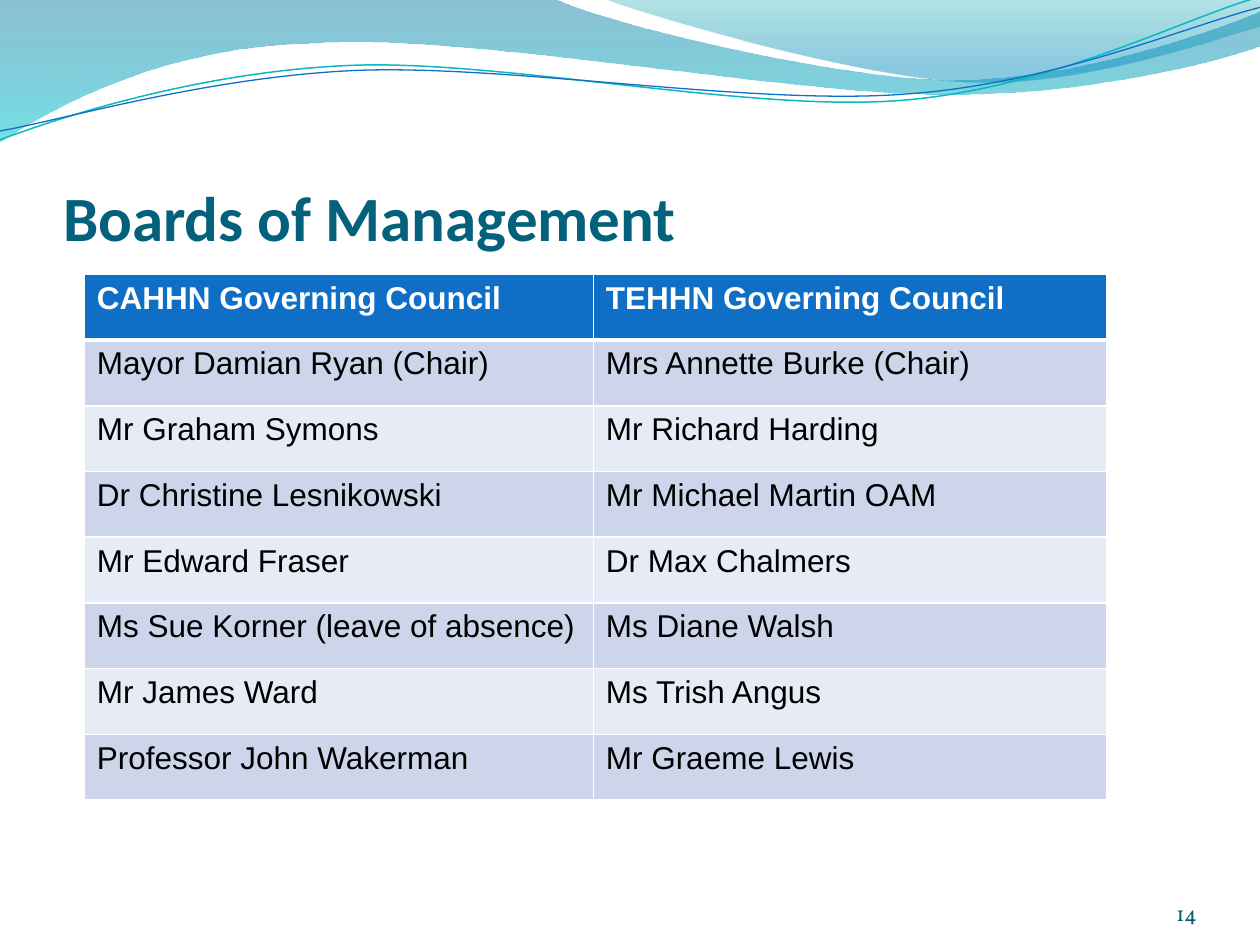
from dataclasses import dataclass

import pptx
import pptx.dml.color
import pptx.enum.text
import pptx.oxml.ns
import pptx.util
from lxml import etree

Cm, Pt = pptx.util.Cm, pptx.util.Pt
qn = pptx.oxml.ns.qn
TEXT = pptx.enum.text

HUES = {
    "title": "04617B", "page": "045D75", "head": "0F6FC6", "odd": "CCD5EA",
    "even": "E7EBF5", "white": "FFFFFF", "black": "000000",
    "sea": "0074A1", "aqua": "00C6CF", "teal": "00A1A9", "sky": "008BBF",
    "cyan": "0AB8BF",
}


@dataclass
class Stop:
    hue: str
    place: float
    alpha: int  # percent opaque


@dataclass
class Wave:
    start: tuple
    steps: list  # two numbers: a straight line; six: a cubic curve (cm)
    stops: tuple = ()
    hue: str = ""
    width: float = 0


WAVES = [
    Wave((0, 0), [
        (11.18, -0.03), (12.09, 0.43, 16.87, 1.6, 19.25, 1.6),
        (21.67, 1.6, 24.33, 0.66, 25.4, 0.23), (25.43, 0.91),
        (24.97, 1.12, 22.1, 1.93, 18.95, 1.9),
        (15.8, 1.9, 9.7, 0.71, 6.53, 0.86),
        (3.28, 0.91, 1.17, 2.11, -0.03, 2.87)],
        stops=(Stop("sea", 0, 45), Stop("aqua", 1, 55))),
    Wave((12.17, -0.03), [
        (12.93, 0.28, 17.32, 1.57, 19.53, 1.65),
        (21.74, 1.75, 24.41, 0.81, 25.4, 0.53), (25.4, 0)],
        stops=(Stop("teal", 0, 30), Stop("sky", 0.8, 45))),
    Wave((0, 2.82), [
        (1.22, 2.36, 4.01, 1.45, 7.04, 1.32),
        (10.03, 1.19, 15.06, 2.26, 18.11, 2.03),
        (21.16, 1.8, 23.83, 0.38, 25.35, -0.05)], hue="cyan", width=0.85),
    Wave((0, 2.64), [
        (1.19, 2.44, 4.17, 1.55, 7.19, 1.42),
        (10.24, 1.3, 15.16, 2.13, 18.21, 1.9),
        (21.23, 1.7, 23.9, 0.53, 25.4, 0.15)], hue="head", width=0.75),
]

ROWS = [
    ("CAHHN Governing Council", "TEHHN Governing Council"),
    ("Mayor Damian Ryan (Chair)", "Mrs Annette Burke (Chair)"),
    ("Mr Graham Symons", "Mr Richard Harding"),
    ("Dr Christine Lesnikowski", "Mr Michael Martin OAM"),
    ("Mr Edward Fraser", "Dr Max Chalmers"),
    ("Ms Sue Korner (leave of absence)", "Ms Diane Walsh"),
    ("Mr James Ward", "Ms Trish Angus"),
    ("Professor John Wakerman", "Mr Graeme Lewis"),
]


def paint(name: str) -> pptx.dml.color.RGBColor:
    return pptx.dml.color.RGBColor.from_string(HUES[name])


def add_run(para, text: str, face: str, size: float, hue: str, bold=False) -> None:
    run = para.add_run()
    run.text = text
    run.font.name, run.font.size, run.font.bold = face, Pt(size), bold
    run.font.color.rgb = paint(hue)


def place(shape, left: float, top: float, width: float, height: float) -> None:
    shape.left, shape.top = Cm(left), Cm(top)
    shape.width, shape.height = Cm(width), Cm(height)


def bend(shape, steps: list) -> None:
    """Turn the straight segments of curved steps into cubic curves."""
    for node, step in zip(list(shape._element.iter(qn("a:lnTo"))), steps):
        if len(step) == 2:
            continue
        curve = etree.Element(qn("a:cubicBezTo"))
        for x, y in zip(step[::2], step[1::2]):
            etree.SubElement(curve, qn("a:pt"), x=str(Cm(x) - shape.left),
                             y=str(Cm(y) - shape.top))
        node.getparent().replace(node, curve)


def draw_wave(slide, wave: Wave) -> None:
    pen = slide.shapes.build_freeform(*map(Cm, wave.start))
    ends = [tuple(map(Cm, step[-2:])) for step in wave.steps]
    pen.add_line_segments(ends, close=bool(wave.stops))
    shape = pen.convert_to_shape()
    bend(shape, wave.steps)
    shape.shadow.inherit = False
    if not wave.stops:
        shape.fill.background()
        shape.line.color.rgb = paint(wave.hue)
        shape.line.width = Pt(wave.width)
        return
    shape.line.fill.background()
    shape.fill.gradient()
    shape.fill.gradient_angle = 270
    for stop, item in zip(shape.fill.gradient_stops, wave.stops):
        stop.color.rgb, stop.position = paint(item.hue), item.place
    for node, item in zip(shape._element.iter(qn("a:gs")), wave.stops):
        etree.SubElement(node[0], qn("a:alpha"), val=str(item.alpha * 1000))


def edge(cell, side: str, width: float) -> None:
    line = etree.SubElement(cell._tc.get_or_add_tcPr(), qn("a:ln" + side), w=str(Pt(width)))
    fill = etree.SubElement(line, qn("a:solidFill"))
    etree.SubElement(fill, qn("a:srgbClr"), val=HUES["white"])


def draw_table(slide, rows: list) -> None:
    wide, high = (10.26, 10.35), 10.6
    table = slide.shapes.add_table(
        len(rows), 2, Cm(1.7), Cm(5.53), Cm(sum(wide)), Cm(high)).table
    for col, width in zip(table.columns, wide):
        col.width = Cm(width)
    for r, names in enumerate(rows):
        head = r == 0
        for c, name in enumerate(names):
            cell = table.cell(r, c)
            for side in "LRTB":
                thick = (r, side) in ((0, "B"), (1, "T"))
                edge(cell, side, 3 if thick else 1)
            cell.fill.solid()
            cell.fill.fore_color.rgb = paint("head" if head else "odd" if r % 2 else "even")
            add_run(cell.text_frame.paragraphs[0], name, "Arial", 18,
                    "white" if head else "black", head)


def set_frame(frame, top: float = 0) -> None:
    frame.word_wrap = True
    frame.auto_size = TEXT.MSO_AUTO_SIZE.NONE
    frame.vertical_anchor = TEXT.MSO_ANCHOR.BOTTOM
    frame.margin_left = frame.margin_right = frame.margin_bottom = 0
    frame.margin_top = Cm(top)


def main() -> None:
    deck = pptx.Presentation()
    deck.slide_width, deck.slide_height = Cm(25.4), Cm(19.05)
    slide = deck.slides.add_slide(deck.slide_layouts[5])

    # Waves along the top
    for wave in WAVES:
        draw_wave(slide, wave)

    # Title
    title = slide.shapes.title
    place(title, 1.27, 1.95, 22.86, 3.17)
    set_frame(title.text_frame, 0.13)
    para = title.text_frame.paragraphs[0]
    para.alignment = TEXT.PP_ALIGN.LEFT
    add_run(para, "Boards of Management", "Calibri", 36, "title", True)

    # Board members
    draw_table(slide, ROWS)

    # Page number
    page = slide.shapes.add_textbox(Cm(22.02), Cm(17.65), Cm(2.11), Cm(1.02))
    set_frame(page.text_frame)
    para = page.text_frame.paragraphs[0]
    para.alignment = TEXT.PP_ALIGN.RIGHT
    add_run(para, "14", "Vollkorn", 12, "page")

    deck.save("out.pptx")


if __name__ == "__main__":
    main()
